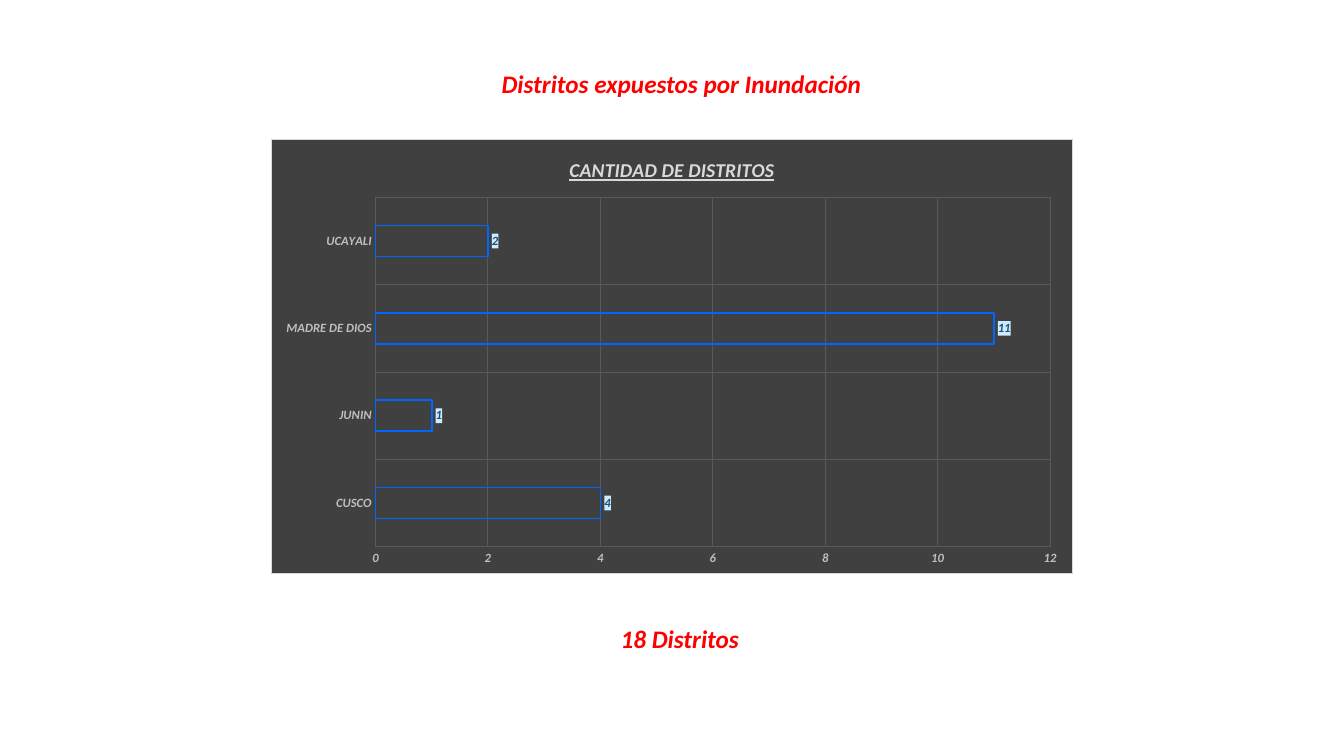
from dataclasses import dataclass

from lxml.etree import SubElement, fromstring
from pptx import Presentation
from pptx.chart.chart import Chart
from pptx.chart.data import CategoryChartData
from pptx.dml.color import RGBColor
from pptx.enum.chart import XL_CHART_TYPE, XL_LABEL_POSITION, XL_TICK_MARK
from pptx.enum.text import MSO_ANCHOR, MSO_AUTO_SIZE, PP_ALIGN
from pptx.oxml.ns import nsdecls, qn
from pptx.util import Emu, Pt

PX = 9525


@dataclass(frozen=True)
class Theme:
    face: str = "Calibri"
    red: str = "FF0000"
    panel: str = "404040"
    edge: str = "D9D9D9"
    grid: str = "595959"
    tick: str = "BFBFBF"
    bar: str = "0066FF"
    label: str = "1F4E79"
    glow: str = "CCECFF"
    head: int = 18
    title: int = 14
    base: int = 10
    small: int = 9


@dataclass(frozen=True)
class Box:
    left: int
    top: int
    width: int
    height: int

    def emu(self) -> list[Emu]:
        return [Emu(n * PX) for n in (self.left, self.top, self.width, self.height)]


@dataclass(frozen=True)
class Note:
    text: str
    box: Box
    wrap: bool


THEME = Theme()
NOTES = [
    Note("Distritos expuestos por Inundación", Box(466, 60, 366, 38), False),
    Note("18 Distritos", Box(575, 589, 145, 38), True),
]
PANEL = Box(258, 132, 764, 415)
PLOT = {"x": 0.13, "y": 0.134, "w": 0.842, "h": 0.804}
COUNTS = {"CUSCO": 4, "JUNIN": 1, "MADRE DE DIOS": 11, "UCAYALI": 2}


def assign(target, values: dict) -> None:
    for name, value in values.items():
        setattr(target, name, value)


def style(font, size: int, color: str, **more) -> None:
    assign(font, {"name": THEME.face, "size": Pt(size), "bold": True, "italic": True, **more})
    font.color.rgb = RGBColor.from_string(color)


def stroke(line, color: str, width: float) -> None:
    line.color.rgb = RGBColor.from_string(color)
    line.width = Pt(width)


def write(slide, note: Note) -> None:
    frame = slide.shapes.add_textbox(*note.box.emu()).text_frame
    assign(frame, {"word_wrap": note.wrap, "auto_size": MSO_AUTO_SIZE.SHAPE_TO_FIT_TEXT,
                   "vertical_anchor": MSO_ANCHOR.TOP})
    para = frame.paragraphs[0]
    para.alignment = PP_ALIGN.CENTER
    run = para.add_run()
    run.text = note.text
    style(run.font, THEME.head, THEME.red)


def backdrop(owner, fill: str, edge: str = "") -> None:
    """Put a filled shape style just before the text style of a chart part."""
    paint = '<a:solidFill><a:srgbClr val="{}"/></a:solidFill>'
    line = f'<a:ln w="{Pt(0.75)}">{paint.format(edge)}</a:ln>' if edge else "<a:ln><a:noFill/></a:ln>"
    props = fromstring(f'<c:spPr {nsdecls("c", "a")}>{paint.format(fill)}{line}</c:spPr>')
    owner.find(qn("c:txPr")).addprevious(props)


def place(chart: Chart) -> None:
    """Fix the inner plot area as fractions of the chart."""
    area = chart.element.find(".//" + qn("c:plotArea"))
    layout = area.find(qn("c:layout"))
    if layout is None:
        layout = SubElement(area, qn("c:layout"))
        area.insert(0, layout)
    manual = SubElement(layout, qn("c:manualLayout"))
    values = {"layoutTarget": "inner", "xMode": "edge", "yMode": "edge", **PLOT}
    for name, value in values.items():
        SubElement(manual, qn("c:" + name)).set("val", str(value))


def graph(slide) -> None:
    data = CategoryChartData(number_format="#,##0")
    data.categories = list(COUNTS)
    data.add_series("Series 1", list(COUNTS.values()))
    kind = XL_CHART_TYPE.BAR_CLUSTERED
    chart = slide.shapes.add_chart(kind, *PANEL.emu(), data).chart
    assign(chart, {"has_legend": False, "has_title": True})
    assign(chart.font, {"name": THEME.face, "size": Pt(THEME.base)})
    backdrop(chart.element, THEME.panel, THEME.edge)
    place(chart)

    chart.chart_title.include_in_layout = False
    run = chart.chart_title.text_frame.paragraphs[0].add_run()
    run.text = "CANTIDAD DE DISTRITOS"
    style(run.font, THEME.title, THEME.edge, underline=True)

    for axis in (chart.category_axis, chart.value_axis):
        assign(axis, {"has_major_gridlines": True, "major_tick_mark": XL_TICK_MARK.NONE,
                      "minor_tick_mark": XL_TICK_MARK.NONE})
        axis.format.line.fill.background()
        stroke(axis.major_gridlines.format.line, THEME.grid, 0.75)
        style(axis.tick_labels.font, THEME.small, THEME.tick)
    assign(chart.value_axis, {"minimum_scale": 0, "maximum_scale": 12, "major_unit": 2})
    assign(chart.value_axis.tick_labels, {"number_format": "#,##0", "number_format_is_linked": False})

    plot = chart.plots[0]
    assign(plot, {"gap_width": 182, "overlap": -50, "vary_by_categories": False})
    bars = plot.series[0]
    bars.format.fill.background()
    stroke(bars.format.line, THEME.bar, 1.25)
    labels = bars.data_labels
    assign(labels, {"show_value": True, "position": XL_LABEL_POSITION.OUTSIDE_END,
                    "number_format": "#,##0", "number_format_is_linked": False})
    style(labels.font, THEME.small, THEME.label)
    backdrop(bars.data_labels.font and bars._element.find(qn("c:dLbls")), THEME.glow)


def main() -> None:
    deck = Presentation()
    assign(deck, {"slide_width": Emu(1280 * PX), "slide_height": Emu(720 * PX)})
    slide = deck.slides.add_slide(deck.slide_layouts[6])
    for note in NOTES:
        write(slide, note)
    graph(slide)
    deck.save("out.pptx")


if __name__ == "__main__":
    main()
